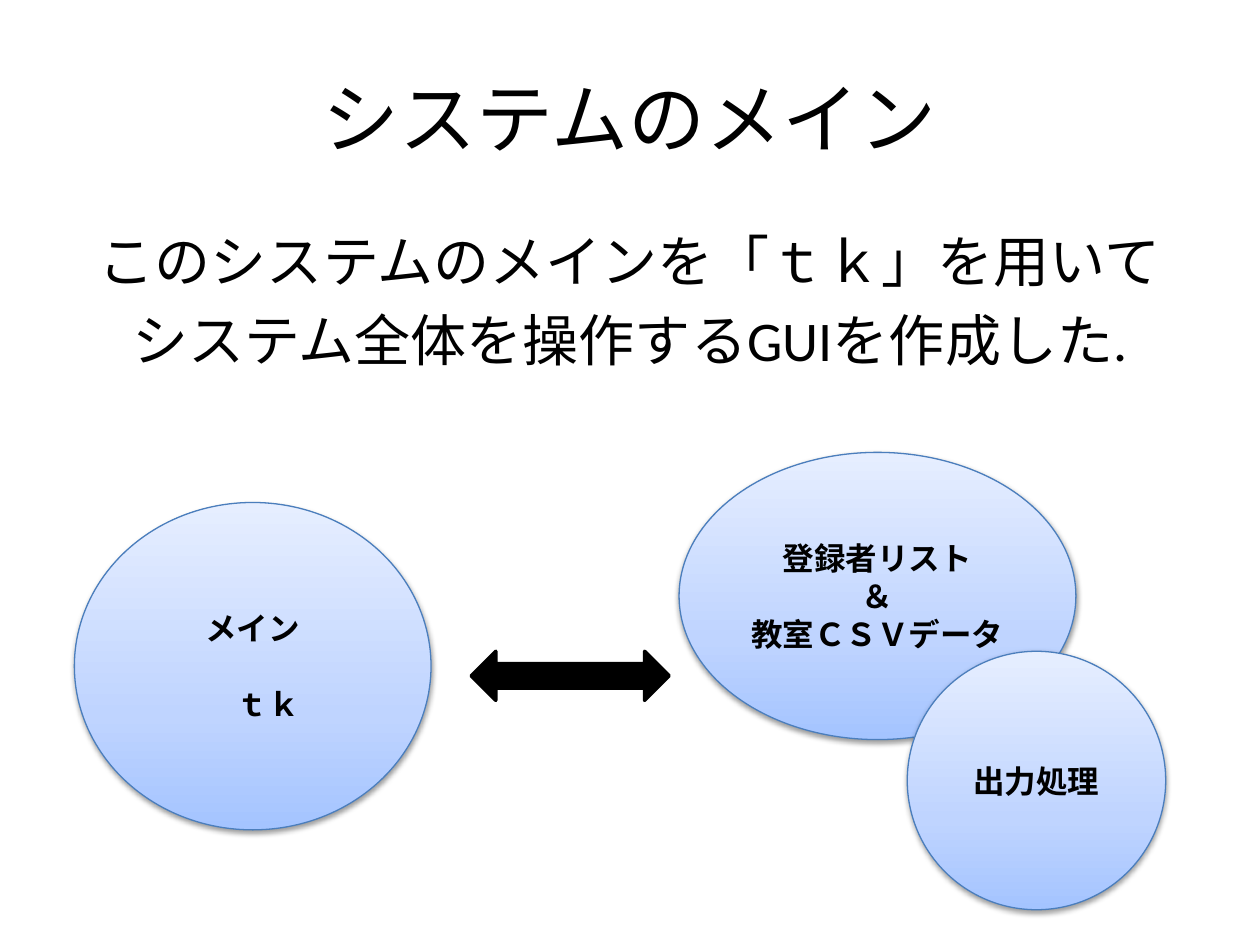
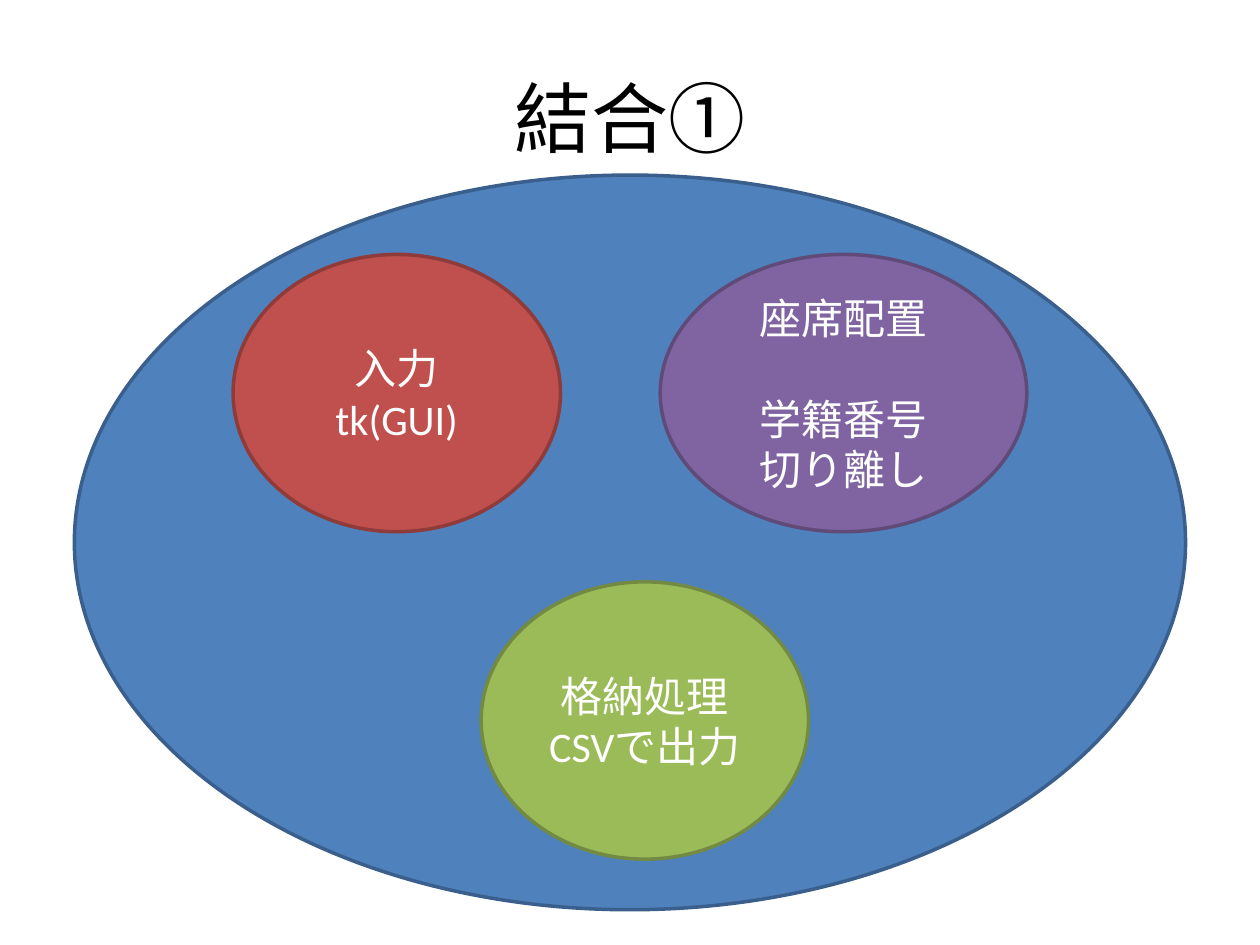
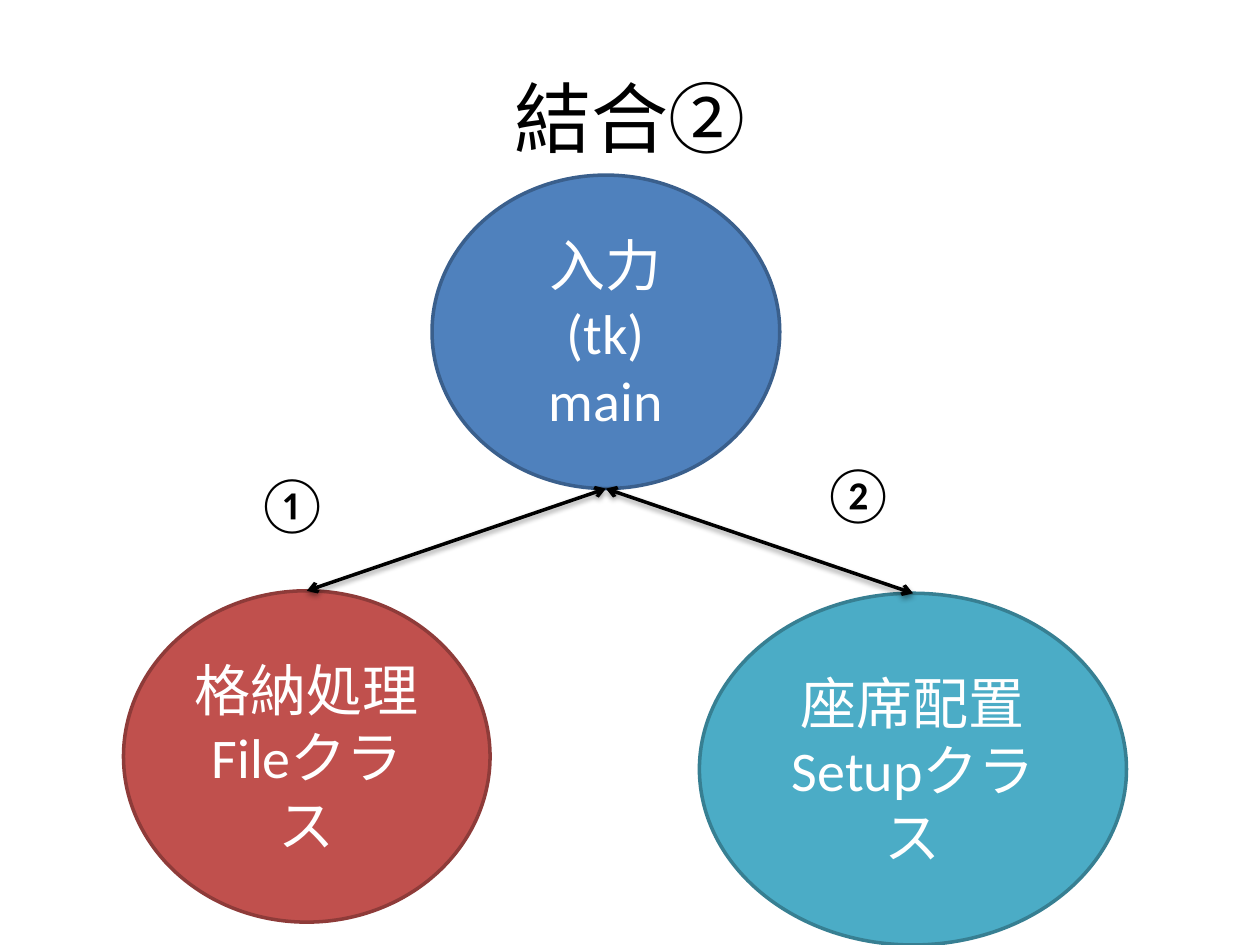
import copy
from dataclasses import dataclass

import pptx
import pptx.dml.color
import pptx.enum.shapes
import pptx.enum.text
import pptx.oxml
import pptx.oxml.ns
import pptx.util
from lxml import etree

Cm = pptx.util.Cm
Pt = pptx.util.Pt
qn = pptx.oxml.ns.qn
Shape = pptx.enum.shapes.MSO_SHAPE
Align = pptx.enum.text.PP_ALIGN
Anchor = pptx.enum.text.MSO_ANCHOR

SHADOW_XML = (
    '<a:outerShdw xmlns:a="http://schemas.openxmlformats.org/drawingml/2006/main"'
    ' blurRad="40000" dist="20000" dir="5400000" rotWithShape="0">'
    '<a:srgbClr val="000000"><a:alpha val="38000"/></a:srgbClr></a:outerShdw>'
)


@dataclass(frozen=True)
class Theme:
    font: str = "Calibri"
    ink: str = "000000"
    paper: str = "FFFFFF"
    # Fill and outline of each solid ellipse
    blue: tuple = ("4F81BD", "3A5F8C")
    red: tuple = ("C0504D", "8E3B39")
    purple: tuple = ("8064A2", "5F4A78")
    green: tuple = ("9BBB59", "738A42")
    aqua: tuple = ("4BACC6", "377F92")
    glow: tuple = ((0, "A4C4FF"), (0.35, "BFD4FF"), (1, "E6EEFF"))
    glow_line: str = "4B7EBC"
    title_size: int = 44
    large: int = 32
    medium: int = 24
    small: int = 18
    thick: float = 2
    thin: float = 0.75


def rgb(value):
    return pptx.dml.color.RGBColor.from_string(value)


def set_all(target, values):
    for name, value in values.items():
        setattr(target, name, value)


class SlideBuilder:
    def __init__(self, deck, theme):
        self.deck = deck
        self.theme = theme
        self.page = None

    def start(self):
        self.page = self.deck.slides.add_slide(self.deck.slide_layouts[6])

    def fill_text(self, box, lines, size, color, align=Align.CENTER, anchor=Anchor.MIDDLE,
                  bold=False, wrap=True, gap=0):
        """Put one paragraph per line, with gap points between the first two."""
        frame = box.text_frame
        set_all(frame, {"word_wrap": wrap, "vertical_anchor": anchor})
        for index, line in enumerate(lines):
            para = frame.paragraphs[0] if index == 0 else frame.add_paragraph()
            set_all(para, {"alignment": align, "space_before": Pt(gap if index == 1 else 0)})
            span = para.add_run()
            span.text = line
            set_all(span.font, {"name": self.theme.font, "size": Pt(size), "bold": bold})
            span.font.color.rgb = rgb(color)

    def text(self, place, lines, size, **style):
        box = self.page.shapes.add_textbox(*map(Cm, place))
        self.fill_text(box, lines, size, self.theme.ink, **style)
        return box

    def title(self, words):
        self.text((1.27, 0.76, 22.86, 3.18), [words], self.theme.title_size)

    def mark(self, left, top, sign):
        box = self.text((left, top, 1.65, 1.63), [sign], self.theme.large,
                        align=Align.LEFT, anchor=Anchor.TOP, wrap=False)
        box.text_frame.auto_size = pptx.enum.text.MSO_AUTO_SIZE.SHAPE_TO_FIT_TEXT

    def outline(self, shape, color, width):
        shape.line.color.rgb = rgb(color)
        shape.line.width = Pt(width)

    def solid(self, kind, place, colors):
        shape = self.page.shapes.add_shape(kind, *map(Cm, place))
        shape.fill.solid()
        shape.fill.fore_color.rgb = rgb(colors[0])
        self.outline(shape, colors[1], self.theme.thick)
        shape.shadow.inherit = False
        return shape

    def ellipse(self, place, colors, lines=(), size=None, gap=0):
        shape = self.solid(Shape.OVAL, place, colors)
        self.fill_text(shape, lines, size, self.theme.paper, gap=gap)
        return shape

    def glow_ellipse(self, place, lines, gap=0):
        shape = self.page.shapes.add_shape(Shape.OVAL, *map(Cm, place))
        shape.fill.gradient()
        shape.fill.gradient_angle = 90
        stop_list = next(shape.element.spPr.iter(qn("a:gsLst")))
        stop_list.append(copy.deepcopy(stop_list[0]))
        for stop, (position, color) in zip(shape.fill.gradient_stops, self.theme.glow):
            stop.position = position
            stop.color.rgb = rgb(color)
        self.outline(shape, self.theme.glow_line, self.theme.thin)
        self.cast_shadow(shape)
        self.fill_text(shape, lines, self.theme.small, self.theme.ink, bold=True, gap=gap)

    def cast_shadow(self, shape):
        effects = etree.SubElement(shape.element.spPr, qn("a:effectLst"))
        effects.append(pptx.oxml.parse_xml(SHADOW_XML))

    def link(self, upper, lower):
        """Join the bottom of one shape to the top of another, with two arrowheads."""
        line = self.page.shapes.add_connector(
            pptx.enum.shapes.MSO_CONNECTOR.STRAIGHT,
            upper.left + upper.width // 2, upper.top + upper.height,
            lower.left + lower.width // 2, lower.top)
        self.outline(line, self.theme.ink, self.theme.thick)
        stroke = line.element.spPr.find(qn("a:ln"))
        for end in ("a:headEnd", "a:tailEnd"):
            etree.SubElement(stroke, qn(end), type="arrow")
        self.cast_shadow(line)


def build_system_main(slide, theme):
    slide.start()
    slide.title("システムのメイン")
    slide.text((1.27, 4.45, 22.86, 12.57),
               ["このシステムのメインを「ｔｋ」を用いて", "システム全体を操作するGUIを作成した."],
               theme.large, anchor=Anchor.TOP, gap=6.4)
    slide.glow_ellipse((1.5, 10.13, 7.19, 6.6), ["メイン", "　ｔｋ"], gap=21.6)
    slide.solid(Shape.LEFT_RIGHT_ARROW, (9.5, 13.13, 3.99, 0.99), (theme.ink, theme.ink))
    slide.glow_ellipse((13.69, 9.12, 8, 5.79), ["登録者リスト", "＆", "教室ＣＳＶデータ"])
    slide.glow_ellipse((18.29, 13.13, 5.21, 5.21), ["出力処理"])


def build_first_union(slide, theme):
    slide.start()
    slide.ellipse((1.5, 3.53, 22.4, 14.81), theme.blue)
    slide.title("結合①")
    slide.ellipse((4.7, 5.13, 6.6, 5.59), theme.red, ["入力", "tk(GUI)"], theme.medium)
    slide.ellipse((13.31, 5.13, 7.39, 5.59), theme.purple,
                  ["座席配置", "学籍番号", "切り離し"], theme.medium, gap=29)
    slide.ellipse((9.7, 11.73, 6.6, 5.59), theme.green, ["格納処理", "CSVで出力"], theme.medium)


def build_second_union(slide, theme):
    slide.start()
    slide.title("結合②")
    entry = slide.ellipse((8.71, 3.53, 7.01, 6.32), theme.blue,
                          ["入力", "(tk)", "main"], theme.large)
    storage = slide.ellipse((2.49, 11.91, 7.39, 6.68), theme.red,
                            ["格納処理", "Fileクラス"], theme.large)
    seating = slide.ellipse((14.1, 11.96, 8.61, 7.09), theme.aqua,
                            ["座席配置", "Setupクラス"], theme.large)
    for target in (seating, storage):
        slide.link(entry, target)
    slide.mark(4.9, 9.32, "①")
    slide.mark(16.31, 9.12, "②")


def main():
    deck = pptx.Presentation()
    set_all(deck, {"slide_width": Cm(25.4), "slide_height": Cm(19.05)})
    theme = Theme()
    slide = SlideBuilder(deck, theme)
    for build in (build_system_main, build_first_union, build_second_union):
        build(slide, theme)
    deck.save("out.pptx")


if __name__ == "__main__":
    main()
